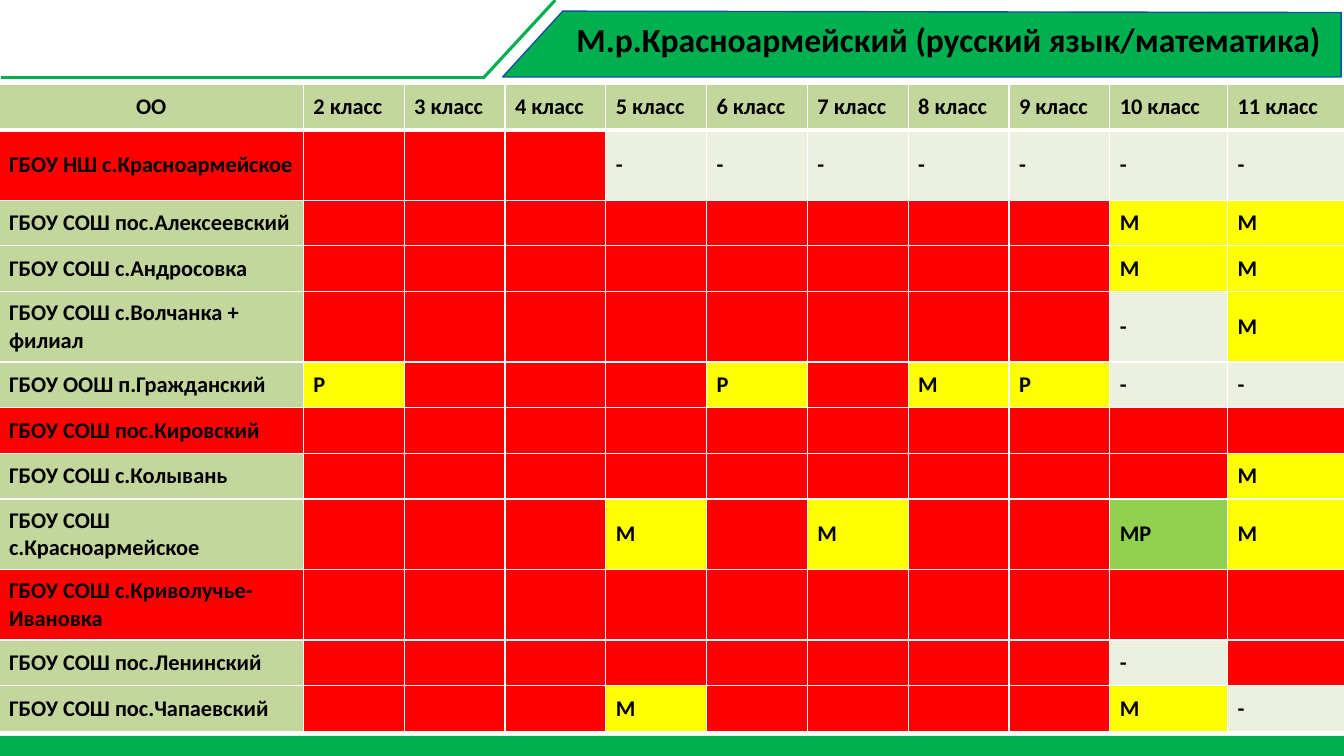
from lxml.etree import SubElement
from pptx import Presentation
from pptx.dml.color import RGBColor
from pptx.enum.shapes import MSO_CONNECTOR as Connector, MSO_SHAPE as Shape
from pptx.enum.text import MSO_ANCHOR as Anchor, MSO_AUTO_SIZE as AutoSize, PP_ALIGN as Align
from pptx.oxml.ns import qn
from pptx.util import Pt

GREEN, OLIVE, RED, WHITE, BLACK = "00B050", "C3D69B", "FF0000", "FFFFFF", "000000"
MARK_FILLS = {"": RED, "-": "EBF1DE", "М": "FFFF00", "Р": "FFFF00", "МР": "92D050"}
LOW_ROW, TALL_ROW = 32.6, 50.4
COLUMN_WIDTHS = [217.4] + [72] * 8 + [84.2] * 2
GRADES = [f"{grade} класс" for grade in range(2, 12)]

# Each school: name, name fill, row height, marks by grade (other grades are empty)
SCHOOLS = [
    ("ГБОУ НШ с.Красноармейское", RED, TALL_ROW, {grade: "-" for grade in range(5, 12)}),
    ("ГБОУ СОШ пос.Алексеевский", OLIVE, LOW_ROW, {10: "М", 11: "М"}),
    ("ГБОУ СОШ с.Андросовка", OLIVE, LOW_ROW, {10: "М", 11: "М"}),
    ("ГБОУ СОШ с.Волчанка + филиал", OLIVE, TALL_ROW, {10: "-", 11: "М"}),
    ("ГБОУ ООШ п.Гражданский", OLIVE, LOW_ROW,
     {2: "Р", 6: "Р", 8: "М", 9: "Р", 10: "-", 11: "-"}),
    ("ГБОУ СОШ пос.Кировский", RED, LOW_ROW, {}),
    ("ГБОУ СОШ с.Колывань", OLIVE, LOW_ROW, {11: "М"}),
    ("ГБОУ СОШ с.Красноармейское", OLIVE, TALL_ROW, {5: "М", 7: "М", 10: "МР", 11: "М"}),
    ("ГБОУ СОШ с.Криволучье-Ивановка", RED, TALL_ROW, {}),
    ("ГБОУ СОШ пос.Ленинский", OLIVE, LOW_ROW, {10: "-"}),
    ("ГБОУ СОШ пос.Чапаевский", OLIVE, LOW_ROW, {5: "М", 10: "М", 11: "-"}),
]


def paint(color_format, color):
    """Set a fill or line format to a solid hex colour."""
    color_format.solid()
    color_format.fore_color.rgb = RGBColor.from_string(color)


def write(paragraph, text, size):
    """Add a bold black run."""
    run = paragraph.add_run()
    run.text = text
    run.font.name = "Calibri"
    run.font.size = Pt(size)
    run.font.bold = True
    paint(run.font.fill, BLACK)


def add_banner(slide):
    """Draw the slanted green banner behind the title."""
    builder = slide.shapes.build_freeform(401.8, 7.9, scale=Pt(1))
    builder.add_line_segments([(957.6, 9.4), (957.6, 55.4), (359.3, 55.4)], close=True)
    banner = builder.convert_to_shape()
    banner.shadow.inherit = False
    paint(banner.fill, GREEN)
    paint(banner.line.fill, "0C549E")
    banner.line.width = Pt(1)


def add_footer(slide):
    """Draw the green strip along the bottom edge."""
    strip = slide.shapes.add_shape(Shape.RECTANGLE, 0, Pt(525.6), Pt(960), Pt(14.4))
    strip.shadow.inherit = False
    paint(strip.fill, GREEN)
    strip.line.fill.background()


def add_rule(slide, *ends):
    """Draw a green line between two points."""
    rule = slide.shapes.add_connector(Connector.STRAIGHT, *map(Pt, ends))
    paint(rule.line.fill, GREEN)
    rule.line.width = Pt(2.25)
    SubElement(rule._element.spPr, qn("a:effectLst"))


def fill_cell(cell, text, color, bottom=1, top=1, align=Align.LEFT):
    """Write, border and colour one table cell."""
    cell.vertical_anchor = Anchor.MIDDLE
    properties = cell._tc.get_or_add_tcPr()
    for side, width in (("lnL", 1), ("lnR", 1), ("lnT", top), ("lnB", bottom)):
        border = SubElement(properties, qn(f"a:{side}"), w=str(Pt(width)))
        solid = SubElement(border, qn("a:solidFill"))
        SubElement(solid, qn("a:srgbClr"), val=WHITE)
    paint(cell.fill, color)
    if text:
        paragraph = cell.text_frame.paragraphs[0]
        paragraph.alignment = align
        write(paragraph, text, 16)


def add_results(slide):
    """Build the table of schools against grades."""
    heights = [LOW_ROW] + [height for _, _, height, _ in SCHOOLS]
    frame = slide.shapes.add_table(len(heights), len(COLUMN_WIDTHS), Pt(-0.7), Pt(60),
                                   Pt(sum(COLUMN_WIDTHS)), Pt(sum(heights)))
    results = frame.table
    results.first_row = results.horz_banding = False
    for column, width in zip(results.columns, COLUMN_WIDTHS):
        column.width = Pt(width)
    for row, height in zip(results.rows, heights):
        row.height = Pt(height)

    fill_cell(results.cell(0, 0), "ОО", OLIVE, bottom=3, align=Align.CENTER)
    for column, grade in enumerate(GRADES, 1):
        fill_cell(results.cell(0, column), grade, OLIVE, bottom=3)
    for row, (school, color, _, marks) in enumerate(SCHOOLS, 1):
        top = 3 if row == 1 else 1
        fill_cell(results.cell(row, 0), school, color, top=top)
        for column in range(1, len(COLUMN_WIDTHS)):
            mark = marks.get(column + 1, "")
            fill_cell(results.cell(row, column), mark, MARK_FILLS[mark], top=top)


def place_title(slide, text):
    """Move the title placeholder onto the banner and fill it."""
    title = slide.shapes.title
    title.left, title.top, title.width, title.height = map(Pt, (404.6, 10.1, 558, 36.4))
    title_frame = title.text_frame
    title_frame.word_wrap = True
    title_frame.auto_size = AutoSize.NONE
    title_frame.vertical_anchor = Anchor.TOP
    paragraph = title_frame.paragraphs[0]
    paragraph.alignment = Align.LEFT
    write(paragraph, text, 24)
    slide.shapes._spTree.append(title._element)


def main():
    """Build and save the slide."""
    deck = Presentation()
    deck.slide_width, deck.slide_height = Pt(960), Pt(540)
    slide = deck.slides.add_slide(deck.slide_layouts[5])
    add_banner(slide)
    add_footer(slide)
    add_rule(slide, 396.7, 0, 345.2, 55.8)
    add_rule(slide, 345.6, 55.4, 0.7, 55.4)
    add_results(slide)
    place_title(slide, "М.р.Красноармейский (русский язык/математика)")
    deck.save("out.pptx")


if __name__ == "__main__":
    main()
